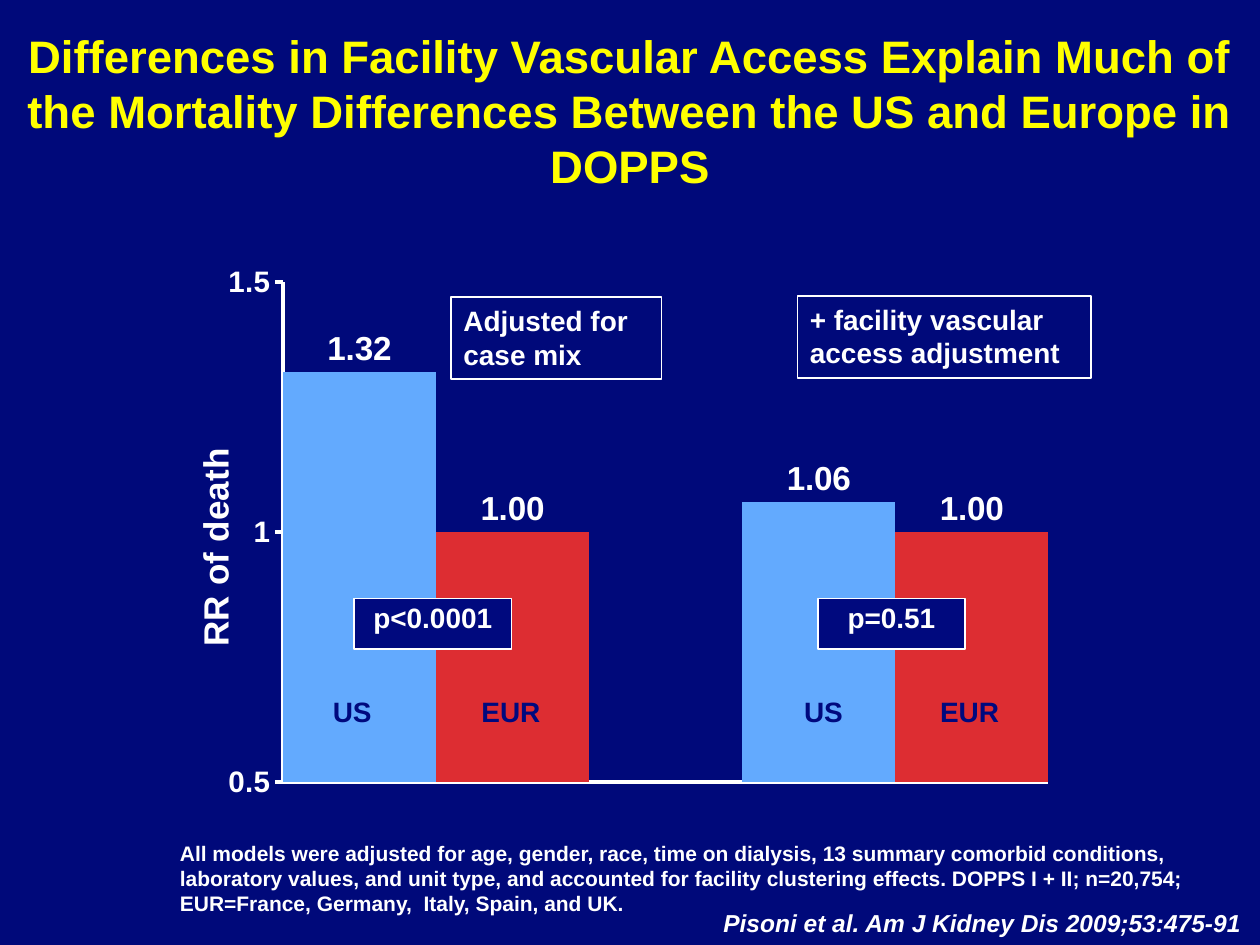
"""Build the slide comparing US and European mortality before and after access adjustment."""
from lxml.etree import SubElement
from pptx import Presentation
from pptx.chart.data import CategoryChartData
from pptx.dml.color import RGBColor
from pptx.enum.chart import (XL_AXIS_CROSSES, XL_CHART_TYPE, XL_LABEL_POSITION,
                             XL_TICK_LABEL_POSITION, XL_TICK_MARK)
from pptx.enum.shapes import MSO_SHAPE
from pptx.enum.text import MSO_ANCHOR, PP_ALIGN
from pptx.oxml.ns import qn
from pptx.util import Inches, Pt

TITLE = ("Differences in Facility Vascular Access Explain Much of the Mortality "
         "Differences Between the US and Europe in DOPPS")
FOOTNOTE = ("All models were adjusted for age, gender, race, time on dialysis, 13 summary "
            "comorbid conditions, laboratory values, and unit type, and accounted for facility "
            "clustering effects. DOPPS I + II; n=20,754; EUR=France, Germany,  Italy, Spain, and UK.")
CITATION = "Pisoni et al. Am J Kidney Dis 2009;53:475-91"
AXIS_TITLE = "RR of death"
RISKS = [("1", 1.32), ("2", 1), ("3", None), ("4", 1.06), ("5", 1)]
EUROPE_POINTS = (1, 4)
REGIONS = [("US", 2.17), ("EUR", 3.43), ("US", 5.91), ("EUR", 7.07)]
P_VALUES = [("p<0.0001", 2.81, 1.25), ("p=0.51", 6.49, 1.17)]
MODELS = [("Adjusted for case mix", 3.58, 2.36, 1.67),
          ("+ facility vascular access adjustment", 6.33, 2.35, 2.33)]

FONT = "Arial"
BACKGROUND = RGBColor(0x00, 0x09, 0x7A)
NAVY = RGBColor(0x00, 0x09, 0x7E)
WHITE = RGBColor(0xFF, 0xFF, 0xFF)
YELLOW = RGBColor(0xFF, 0xFF, 0x00)
BLUE = RGBColor(0x63, 0xAA, 0xFE)
RED = RGBColor(0xDD, 0x2D, 0x32)


def style_font(font, size, color, italic=None):
    font.name, font.size, font.bold, font.italic = FONT, Pt(size), True, italic
    font.color.rgb = color


def add_text(slide, text, box, size=16, color=WHITE, align=PP_ALIGN.LEFT, anchor=MSO_ANCHOR.TOP,
             spacing=None, italic=None, wrap=True, framed=False, fill=None):
    place = [Inches(length) for length in box]
    if framed:
        shape = slide.shapes.add_shape(MSO_SHAPE.RECTANGLE, *place)
        shape.shadow.inherit = False
        shape.line.color.rgb = WHITE
        shape.line.width = Pt(1)
        if fill is None:
            shape.fill.background()
        else:
            shape.fill.solid()
            shape.fill.fore_color.rgb = fill
    else:
        shape = slide.shapes.add_textbox(*place)
    frame = shape.text_frame
    frame.word_wrap = wrap
    frame.vertical_anchor = anchor
    paragraph = frame.paragraphs[0]
    paragraph.alignment = align
    paragraph.line_spacing = spacing
    run = paragraph.add_run()
    run.text = text
    style_font(run.font, size, color, italic)


def set_layout(element, **settings):
    layout = element.find(qn("c:layout"))
    if layout is None:
        layout = element.makeelement(qn("c:layout"))
        element.insert(0, layout)
    manual = SubElement(layout, qn("c:manualLayout"))
    for name, value in settings.items():
        SubElement(manual, qn(f"c:{name}")).set("val", str(value))


def style_axis(axis, tick_mark):
    axis.has_major_gridlines = False
    axis.major_tick_mark = tick_mark
    axis.minor_tick_mark = XL_TICK_MARK.NONE
    axis.format.line.color.rgb = WHITE
    axis.format.line.width = Pt(2.25)


def add_risk_chart(slide, box):
    data = CategoryChartData()
    data.categories = [category for category, _ in RISKS]
    data.add_series("Series 1", [risk for _, risk in RISKS])
    chart = slide.shapes.add_chart(XL_CHART_TYPE.COLUMN_CLUSTERED,
                                   *[Inches(length) for length in box], data).chart
    chart.has_title = chart.has_legend = False
    style_font(chart.font, 19, WHITE)

    style_axis(chart.category_axis, XL_TICK_MARK.NONE)
    chart.category_axis.tick_label_position = XL_TICK_LABEL_POSITION.NONE
    axis = chart.value_axis
    style_axis(axis, XL_TICK_MARK.OUTSIDE)
    axis.minimum_scale, axis.maximum_scale, axis.major_unit = 0.5, 1.5, 0.5
    axis.crosses = XL_AXIS_CROSSES.MINIMUM
    style_font(axis.tick_labels.font, 16.9, WHITE)
    run = axis.axis_title.text_frame.paragraphs[0].add_run()
    run.text = AXIS_TITLE
    style_font(run.font, 20, WHITE)
    set_layout(axis.axis_title._element, xMode="edge", yMode="edge", x=0.04, y=0.33)

    plot = chart.plots[0]
    plot.gap_width = 0
    plot.vary_by_categories = False
    series = plot.series[0]
    series.invert_if_negative = False
    series.format.fill.solid()
    series.format.fill.fore_color.rgb = BLUE
    for index in EUROPE_POINTS:
        point_fill = series.points[index].format.fill
        point_fill.solid()
        point_fill.fore_color.rgb = RED
    labels = series.data_labels
    labels.show_value = True
    labels.number_format, labels.number_format_is_linked = "0.00", False
    labels.position = XL_LABEL_POSITION.OUTSIDE_END
    style_font(labels.font, 19, WHITE)
    plot_area = chart._chartSpace.find(".//" + qn("c:plotArea"))
    set_layout(plot_area, layoutTarget="inner", xMode="edge", yMode="edge",
               x=0.138, y=0.094, w=0.78, h=0.738)


def main():
    presentation = Presentation()
    presentation.slide_width, presentation.slide_height = Inches(10), Inches(7.5)
    slide = presentation.slides.add_slide(presentation.slide_layouts[6])
    slide.background.fill.solid()
    slide.background.fill.fore_color.rgb = BACKGROUND

    add_text(slide, TITLE, (0, 0.25, 10, 1.25), size=26, color=YELLOW,
             align=PP_ALIGN.CENTER, anchor=MSO_ANCHOR.MIDDLE)
    add_text(slide, FOOTNOTE, (1.33, 6.62, 8.5, 0.71), size=12)
    add_risk_chart(slide, (1.17, 1.73, 7.79, 5.38))
    for region, left in REGIONS:
        add_text(slide, region, (left, 5.58, 1.25, 0.26), color=NAVY,
                 align=PP_ALIGN.CENTER, spacing=0.5)
    for p_value, left, width in P_VALUES:
        add_text(slide, p_value, (left, 4.75, width, 0.4), align=PP_ALIGN.CENTER,
                 anchor=MSO_ANCHOR.MIDDLE, spacing=0.5, framed=True, fill=NAVY)
    for model, left, top, width in MODELS:
        add_text(slide, model, (left, top, width, 0.65), framed=True)
    add_text(slide, CITATION, (5.56, 7.16, 4.39, 0.34), size=14, align=PP_ALIGN.RIGHT,
             italic=True, wrap=False)
    presentation.save("out.pptx")


if __name__ == "__main__":
    main()
